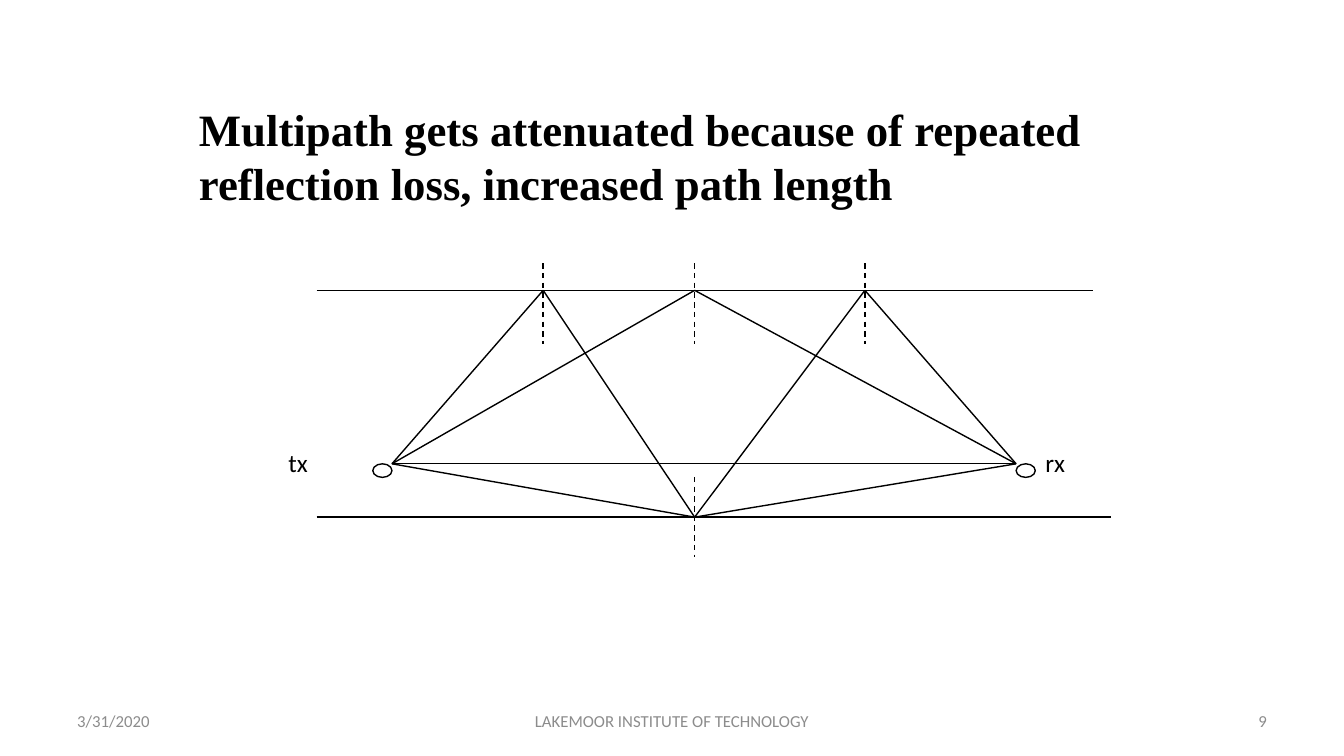
from collections import namedtuple
from dataclasses import dataclass
from lxml import etree
from pptx import Presentation
from pptx import util as u
from pptx.dml.color import RGBColor
from pptx.enum import dml, shapes, text
from pptx.oxml.ns import qn

Box = namedtuple("Box", "left top width height")


@dataclass(frozen=True)
class Theme:
    """Colours, fonts and sizes of the slide."""
    ink: RGBColor = RGBColor(0, 0, 0)
    muted: RGBColor = RGBColor(0x8C, 0x8C, 0x8C)
    heading_font: str = "Times New Roman"
    body_font: str = "Calibri"
    heading_size: int = 32
    label_size: int = 18
    footer_size: int = 12
    stroke: int = 1


THEME = Theme()


def write(frame, words, *, size, font=THEME.body_font, color=THEME.ink, bold=False,
          align=text.PP_ALIGN.LEFT, anchor=text.MSO_ANCHOR.TOP, spacing=1.0, inset=None):
    """Put formatted words into a text frame."""
    frame.word_wrap = True
    frame.auto_size = text.MSO_AUTO_SIZE.NONE
    frame.vertical_anchor = anchor
    if inset is not None:
        frame.margin_left = frame.margin_right = u.Pt(inset)
        frame.margin_top = frame.margin_bottom = u.Pt(inset)
    paragraph = frame.paragraphs[0]
    paragraph.alignment = align
    paragraph.line_spacing = spacing
    run = paragraph.add_run()
    run.text = words
    run.font.size, run.font.name, run.font.bold = u.Pt(size), font, bold
    run.font.color.rgb = color


def add_label(slide, box, words, **style):
    """Add a text box filled with formatted words."""
    label = slide.shapes.add_textbox(*map(u.Pt, box))
    write(label.text_frame, words, **style)


def add_line(slide, start, end, dashed=False):
    """Draw a straight line between two points."""
    line = slide.shapes.add_connector(
        shapes.MSO_CONNECTOR.STRAIGHT, *map(u.Pt, (*start, *end)))
    line.line.color.rgb = THEME.ink
    line.line.width = u.Pt(THEME.stroke)
    if dashed:
        line.line.dash_style = dml.MSO_LINE.DASH
    etree.SubElement(line._element.spPr, qn("a:effectLst"))


def add_antenna(slide, box):
    """Draw an antenna as an unfilled oval."""
    antenna = slide.shapes.add_shape(shapes.MSO_SHAPE.OVAL, *map(u.Pt, box))
    antenna.shadow.inherit = False
    antenna.fill.background()
    antenna.line.color.rgb = THEME.ink
    antenna.line.width = u.Pt(THEME.stroke)


def add_heading(slide, box, words):
    """Place the slide title."""
    title = slide.shapes.title
    title.left, title.top, title.width, title.height = map(u.Pt, box)
    write(title.text_frame, words, size=THEME.heading_size,
          font=THEME.heading_font, bold=True)


def add_multipath(slide, box):
    """Draw the walls, antennas, rays and wall normals."""
    def at(x, y):
        return box.left + x, box.top + y

    ceiling, floor, level = 19.4, 181.4, 143.3
    wall_left = 20.2
    antenna_width, antenna_height = 13.7, 9.7
    normal_length = 57.6
    tx, rx = at(74, level), at(519.8, level)
    first, middle, last = (at(x, ceiling) for x in (182, 290.2, 411.8))
    ground = at(290.2, floor)

    add_line(slide, at(wall_left, ceiling), at(574.5, ceiling))
    add_line(slide, at(wall_left, floor), at(box.width, floor))
    for left in (tx[0] - antenna_width, rx[0]):
        add_antenna(slide, Box(left, tx[1], antenna_width, antenna_height))

    ray_paths = [(tx, rx), (tx, middle, rx), (tx, ground, rx),
                 (tx, first, ground, last, rx)]
    for ray in ray_paths:
        for start, end in zip(ray, ray[1:]):
            add_line(slide, start, end)

    normals = [(point, ceiling) for point in (first, middle, last)]
    normals.append((ground, normal_length / 2))
    for (x, y), rise in normals:
        add_line(slide, (x, y - rise), (x, y - rise + normal_length), dashed=True)

    for name, x in (("tx", 0), ("rx", 540.7)):
        add_label(slide, Box(*at(x, 130.3), 40, 47), name,
                  size=THEME.label_size, spacing=1.07, inset=0)


def add_footer(slide, box):
    """Place the date, institute and slide number along the bottom."""
    side, centre = 224, 304
    parts = [
        ("3/31/2020", box.left, side, text.PP_ALIGN.LEFT),
        ("LAKEMOOR INSTITUTE OF TECHNOLOGY", box.left + (box.width - centre) / 2,
         centre, text.PP_ALIGN.CENTER),
        ("9", box.left + box.width - side, side, text.PP_ALIGN.RIGHT),
    ]
    for words, left, width, align in parts:
        add_label(slide, Box(left, box.top, width, box.height), words,
                  size=THEME.footer_size, color=THEME.muted, align=align,
                  anchor=text.MSO_ANCHOR.MIDDLE)


def main():
    """Build and save the slide."""
    deck = Presentation()
    deck.slide_width, deck.slide_height = u.Pt(960), u.Pt(540)
    slide = deck.slides.add_slide(deck.slide_layouts.get_by_name("Title Only"))
    add_heading(slide, Box(134.9, 69.2, 720, 85),
                "Multipath gets attenuated because of repeated reflection loss, "
                "increased path length")
    add_multipath(slide, Box(206, 188, 587.5, 210.4))
    add_footer(slide, Box(48, 500.5, 864, 28.8))
    deck.save("out.pptx")


if __name__ == "__main__":
    main()
